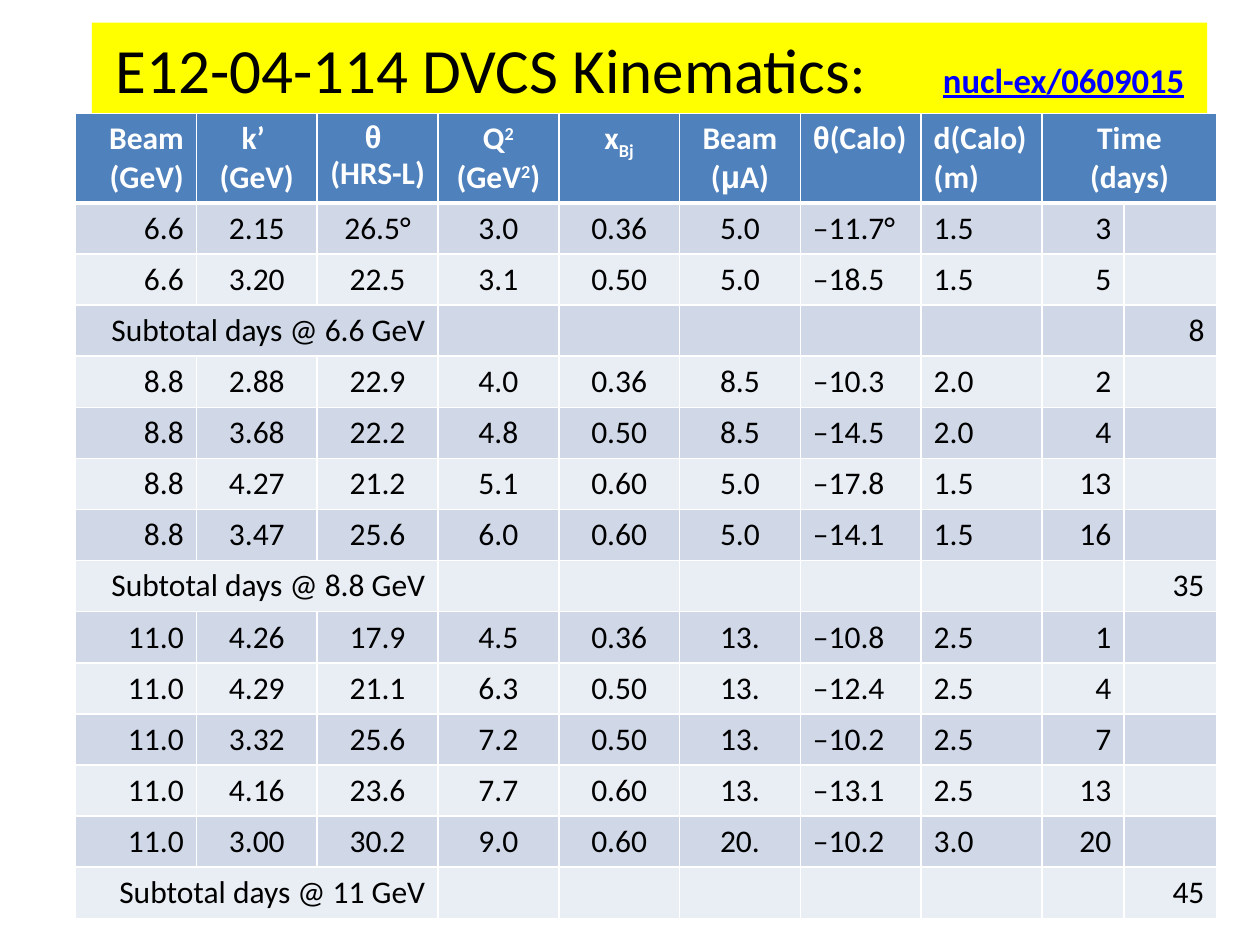
"""Build the DVCS kinematics slide: a highlighted title above a beam-time table."""
import dataclasses
import typing

import lxml.etree
import pptx
import pptx.dml.color
import pptx.enum.text
import pptx.oxml.ns
import pptx.util

RGBColor = pptx.dml.color.RGBColor
Inches = pptx.util.Inches
Pt = pptx.util.Pt
Align = pptx.enum.text.PP_ALIGN

BLACK = RGBColor(0x00, 0x00, 0x00)
WHITE = RGBColor(0xFF, 0xFF, 0xFF)
YELLOW = RGBColor(0xFF, 0xFF, 0x00)
LINK_BLUE = RGBColor(0x00, 0x00, 0xFF)
HEADER_BLUE = RGBColor(0x4F, 0x81, 0xBD)
BANDS = (RGBColor(0xD0, 0xD8, 0xE8), RGBColor(0xE9, 0xED, 0xF4))

TABLE_LEFT, TABLE_TOP, TABLE_WIDTH, TABLE_HEIGHT = 0.6, 0.9, 9.06, 6.38
HEADER_HEIGHT = 0.7
TIME_WIDTHS = [0.65, 0.74]
VALUE_COLUMNS = 8


@dataclasses.dataclass(frozen=True)
class Span:
    """A stretch of text in one format."""

    text: str
    font: str = "Calibri"
    size: float = 18
    color: RGBColor = BLACK
    bold: bool = False
    underline: bool = False
    baseline: int = 0


@dataclasses.dataclass(frozen=True)
class BeamGroup:
    """Settings at one beam energy and their total of days."""

    energy: str
    label: str
    total: str
    settings: list[str]


def heading(text: str, font: str = "Calibri", baseline: int = 0) -> Span:
    """Return a white bold span for the header row."""
    return Span(text, font, color=WHITE, bold=True, baseline=baseline)


HEADINGS = [
    [[heading("Beam (GeV)")]],
    [[heading("k’ \v(GeV)")]],
    [[heading("θ \v", "Arial"), heading("(HRS-L)")]],
    [[heading("Q"), heading("2 ", baseline=30), heading("(GeV"), heading("2", baseline=30), heading(")")]],
    [[heading("x"), heading("Bj", baseline=-25)]],
    [[heading("Beam ("), heading("μ", "Arial"), heading("A)")]],
    [[heading("θ", "Arial"), heading("(Calo)")]],
    [[heading("d(Calo) (m)")]],
    [[heading("Time")], [heading("(days)")]],
]
VALUE_ALIGNS = [Align.RIGHT] + [Align.CENTER] * 5 + [Align.LEFT] * 2 + [Align.RIGHT]
HEADING_ALIGNS = VALUE_ALIGNS[:-1] + [Align.CENTER]

GROUPS = [
    BeamGroup("6.6", "6.6", "8", [
        "2.15 26.5° 3.0 0.36 5.0 –11.7° 1.5 3",
        "3.20 22.5 3.1 0.50 5.0 –18.5 1.5 5",
    ]),
    BeamGroup("8.8", "8.8", "35", [
        "2.88 22.9 4.0 0.36 8.5 –10.3 2.0 2",
        "3.68 22.2 4.8 0.50 8.5 –14.5 2.0 4",
        "4.27 21.2 5.1 0.60 5.0 –17.8 1.5 13",
        "3.47 25.6 6.0 0.60 5.0 –14.1 1.5 16",
    ]),
    BeamGroup("11.0", "11", "45", [
        "4.26 17.9 4.5 0.36 13. –10.8 2.5 1",
        "4.29 21.1 6.3 0.50 13. –12.4 2.5 4",
        "3.32 25.6 7.2 0.50 13. –10.2 2.5 7",
        "4.16 23.6 7.7 0.60 13. –13.1 2.5 13",
        "3.00 30.2 9.0 0.60 20. –10.2 3.0 20",
    ]),
]


def add_span(para: typing.Any, span: Span) -> None:
    """Add a span to a paragraph, turning vertical tabs into line breaks."""
    for index, part in enumerate(span.text.split("\v")):
        if index:
            para.add_line_break()
        if not part:
            continue
        run = para.add_run()
        run.text = part
        font = run.font
        font.name, font.size = span.font, Pt(span.size)
        font.bold, font.underline = span.bold, span.underline
        font.color.rgb = span.color
        if span.baseline:
            run._r.get_or_add_rPr().set("baseline", str(span.baseline * 1000))


def write(cell: typing.Any, paragraphs: list[list[Span]], align: typing.Any) -> None:
    """Write paragraphs of spans into a table cell."""
    frame = cell.text_frame
    for index, spans in enumerate(paragraphs):
        para = frame.add_paragraph() if index else frame.paragraphs[0]
        para.alignment = align
        for span in spans:
            add_span(para, span)


def style_cell(cell: typing.Any, fill: RGBColor, top: float, bottom: float) -> None:
    """Fill a cell and draw its white borders."""
    cell.fill.solid()
    cell.fill.fore_color.rgb = fill
    properties = cell._tc.get_or_add_tcPr()
    qn = pptx.oxml.ns.qn
    for index, (side, width) in enumerate(zip("LRTB", (1, 1, top, bottom))):
        line = lxml.etree.Element(qn(f"a:ln{side}"), w=str(Pt(width)))
        solid = lxml.etree.SubElement(line, qn("a:solidFill"))
        lxml.etree.SubElement(solid, qn("a:srgbClr"), val=str(WHITE))
        properties.insert(index, line)


def add_title(slide: typing.Any) -> None:
    """Format the title placeholder, with the reference at a right tab."""
    title = slide.shapes.title
    title.left, title.top = Inches(0.73), Inches(0.18)
    title.width, title.height = Inches(8.85), Inches(0.72)
    title.fill.solid()
    title.fill.fore_color.rgb = YELLOW
    frame = title.text_frame
    frame.auto_size = pptx.enum.text.MSO_AUTO_SIZE.NONE
    frame.vertical_anchor = pptx.enum.text.MSO_ANCHOR.MIDDLE
    frame.margin_left, frame.margin_right = Inches(0.19), Inches(0.1)
    para = frame.paragraphs[0]
    para.alignment = Align.LEFT
    qn = pptx.oxml.ns.qn
    tabs = lxml.etree.SubElement(para._p.get_or_add_pPr(), qn("a:tabLst"))
    lxml.etree.SubElement(tabs, qn("a:tab"), pos=str(Inches(8.48)), algn="r")
    add_span(para, Span("E12-04-114 DVCS Kinematics", size=36))
    add_span(para, Span(":\t", size=32.4))
    add_span(para, Span("nucl-ex/0609015", size=19.8, color=LINK_BLUE, bold=True, underline=True))


def add_kinematics_table(slide: typing.Any) -> None:
    """Add the table of settings with a subtotal row after each energy."""
    row_count = 1 + sum(len(group.settings) + 1 for group in GROUPS)
    widths = [(TABLE_WIDTH - sum(TIME_WIDTHS)) / VALUE_COLUMNS] * VALUE_COLUMNS + TIME_WIDTHS
    heights = [HEADER_HEIGHT] + [(TABLE_HEIGHT - HEADER_HEIGHT) / (row_count - 1)] * (row_count - 1)
    box = [Inches(length) for length in (TABLE_LEFT, TABLE_TOP, TABLE_WIDTH, TABLE_HEIGHT)]
    table = slide.shapes.add_table(row_count, len(widths), *box).table
    for column, width in zip(table.columns, widths):
        column.width = Inches(width)
    for index, (row, height) in enumerate(zip(table.rows, heights)):
        row.height = Inches(height)
        fill = BANDS[(index - 1) % 2] if index else HEADER_BLUE
        for cell in row.cells:
            style_cell(cell, fill, 3 if index == 1 else 1, 1 if index else 3)

    table.cell(0, 8).merge(table.cell(0, 9))
    for column, (paragraphs, align) in enumerate(zip(HEADINGS, HEADING_ALIGNS)):
        write(table.cell(0, column), paragraphs, align)
    row = 1
    for group in GROUPS:
        for setting in group.settings:
            values = [group.energy, *setting.split()]
            for column, (value, align) in enumerate(zip(values, VALUE_ALIGNS)):
                write(table.cell(row, column), [[Span(value)]], align)
            row += 1
        table.cell(row, 0).merge(table.cell(row, 2))
        write(table.cell(row, 0), [[Span(f"Subtotal days @ {group.label} GeV")]], Align.RIGHT)
        write(table.cell(row, 9), [[Span(group.total)]], Align.RIGHT)
        row += 1


def main() -> None:
    """Build and save the deck."""
    deck = pptx.Presentation()
    deck.slide_width, deck.slide_height = Inches(10), Inches(7.5)
    slide = deck.slides.add_slide(deck.slide_layouts.get_by_name("Title Only"))
    add_title(slide)
    add_kinematics_table(slide)
    deck.save("out.pptx")


if __name__ == "__main__":
    main()
